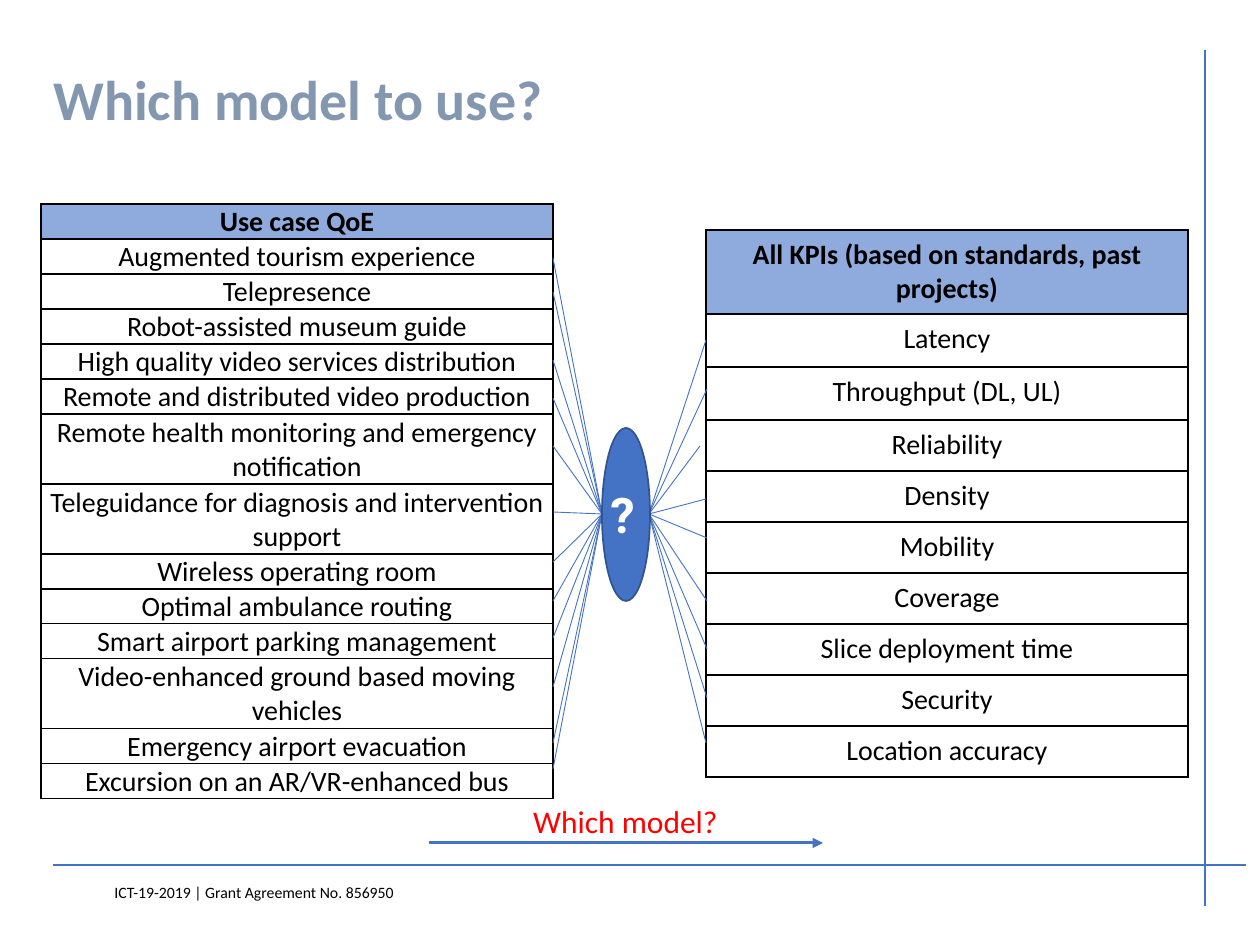
import pptx
import pptx.dml.color
import pptx.enum.shapes
import pptx.enum.text
import pptx.oxml
import pptx.oxml.ns
import pptx.util

RGBColor = pptx.dml.color.RGBColor
ALIGN = pptx.enum.text.PP_ALIGN
ANCHOR = pptx.enum.text.MSO_ANCHOR

BLUE = RGBColor(0x44, 0x72, 0xC4)
DARK_BLUE = RGBColor(0x32, 0x54, 0x91)
HEADER_BLUE = RGBColor(0x8F, 0xAA, 0xDC)
TITLE_GREY = RGBColor(0x84, 0x97, 0xB0)
BLACK = RGBColor(0, 0, 0)
WHITE = RGBColor(255, 255, 255)
RED = RGBColor(255, 0, 0)

PX_PER_INCH = 126
USE_CASES = [
    "Use case QoE",
    "Augmented tourism experience",
    "Telepresence",
    "Robot-assisted museum guide",
    "High quality video services distribution",
    "Remote and distributed video production",
    "Remote health monitoring and emergency notification",
    "Teleguidance for diagnosis and intervention support",
    "Wireless operating room",
    "Optimal ambulance routing",
    "Smart airport parking management",
    "Video-enhanced ground based moving vehicles",
    "Emergency airport evacuation",
    "Excursion on an AR/VR-enhanced bus",
]
KPIS = [
    "All KPIs (based on standards, past projects)",
    "Latency",
    "Throughput (DL, UL)",
    "Reliability",
    "Density",
    "Mobility",
    "Coverage",
    "Slice deployment time",
    "Security",
    "Location accuracy",
]
TWO_LINE_ROWS = (6, 7, 11)
USE_CASE_LINE_YS = [258, 292, 360, 398, 446, 512, 562, 601, 638, 687, 743, 769]
KPI_LINE_ENDS = [(706, 340), (707, 389), (700, 446), (706, 499), (707, 538),
                 (707, 601), (707, 649), (707, 698), (706, 743)]


def px(length):
    return pptx.util.Emu(round(length * 914400 / PX_PER_INCH))


def add_span(para, text, size, color, bold=False, font="Calibri"):
    span = para.add_run()
    span.text = text
    span.font.name = font
    span.font.size = pptx.util.Pt(size)
    span.font.bold = bold
    span.font.color.rgb = color


def add_text(page, frame, text, size, color, bold=False, font="Calibri",
             align=ALIGN.LEFT, anchor=ANCHOR.TOP, wrap=True, spacing=None):
    box = page.shapes.add_textbox(*map(px, frame))
    box.text_frame.word_wrap = wrap
    box.text_frame.vertical_anchor = anchor
    para = box.text_frame.paragraphs[0]
    para.alignment = align
    para.line_spacing = spacing
    add_span(para, text, size, color, bold, font)


def add_line(page, start, end, width, arrow=False):
    line = page.shapes.add_connector(
        pptx.enum.shapes.MSO_CONNECTOR.STRAIGHT, *map(px, start + end))
    line.line.color.rgb = BLUE
    line.line.width = pptx.util.Pt(width)
    if arrow:
        head = pptx.oxml.parse_xml(
            f'<a:tailEnd {pptx.oxml.ns.nsdecls("a")} type="triangle"/>')
        line.line._get_or_add_ln().append(head)
    effects = pptx.oxml.parse_xml(f'<a:effectLst {pptx.oxml.ns.nsdecls("a")}/>')
    line._element.spPr.append(effects)


def add_borders(cell):
    """Draw a 1 pt black line on all four sides; call before filling the cell."""
    for side in "LRTB":
        cell._tc.get_or_add_tcPr().append(pptx.oxml.parse_xml(
            f'<a:ln{side} {pptx.oxml.ns.nsdecls("a")} w="12700"><a:solidFill>'
            f'<a:srgbClr val="{BLACK}"/></a:solidFill></a:ln{side}>'))


def add_list_table(page, left, top, width, labels, heights, margins, anchors):
    """One-column table; margins are (side, top, bottom)."""
    table = page.shapes.add_table(
        len(labels), 1, px(left), px(top), px(width), px(sum(heights))).table
    side, above, below = margins
    for row, (label, height, anchor) in enumerate(zip(labels, heights, anchors)):
        header = row == 0
        table.rows[row].height = px(height)
        cell = table.cell(row, 0)
        cell.margin_left = cell.margin_right = px(side)
        cell.margin_top, cell.margin_bottom = px(above), px(below)
        cell.vertical_anchor = anchor
        add_borders(cell)
        cell.fill.solid()
        cell.fill.fore_color.rgb = HEADER_BLUE if header else WHITE
        para = cell.text_frame.paragraphs[0]
        para.alignment = ALIGN.CENTER
        add_span(para, label, 16, BLACK, header)


def add_ellipse(page, frame):
    ellipse = page.shapes.add_shape(
        pptx.enum.shapes.MSO_SHAPE.OVAL, *map(px, frame))
    ellipse.shadow.inherit = False
    ellipse.fill.solid()
    ellipse.fill.fore_color.rgb = BLUE
    ellipse.line.color.rgb = DARK_BLUE
    ellipse.line.width = pptx.util.Pt(1)


def main():
    deck = pptx.Presentation()
    deck.slide_width, deck.slide_height = px(1260), px(945)
    page = deck.slides.add_slide(deck.slide_layouts[6])

    add_line(page, (53, 865), (1246, 865), 1)
    add_text(page, (102, 877, 498, 31),
             "ICT-19-2019 | Grant Agreement No. 856950", 9, BLACK)
    add_line(page, (1205, 50), (1205, 906), 1)
    add_text(page, (41, 26, 911, 152), "Which model to use?", 32, TITLE_GREY,
             bold=True, anchor=ANCHOR.MIDDLE, spacing=0.9)

    add_list_table(page, 706, 230, 482, KPIS, [84, 53, 53] + [51] * 7,
                   (11, 8, 8), [ANCHOR.TOP] * len(KPIS))
    rows = range(len(USE_CASES))
    add_list_table(page, 41, 204, 512, USE_CASES,
                   [70 if row in TWO_LINE_ROWS else 35 for row in rows], (1, 1, 0),
                   [ANCHOR.MIDDLE if row in (1, 3, 5, 11) else ANCHOR.BOTTOM
                    for row in rows])

    for y in USE_CASE_LINE_YS:
        add_line(page, (553, y), (602, 514), 0.5)
    for end in KPI_LINE_ENDS:
        add_line(page, (649, 514), end, 0.5)
    add_ellipse(page, (602, 428, 48, 173))
    add_text(page, (598, 478, 55, 72), "?", 28, WHITE, bold=True,
             font="Roboto", wrap=False)

    add_line(page, (429, 843), (823, 843), 1.75, arrow=True)
    add_text(page, (519, 796, 213, 50), "Which model?", 18, RED,
             align=ALIGN.CENTER, wrap=False)
    deck.save("out.pptx")


if __name__ == "__main__":
    main()
